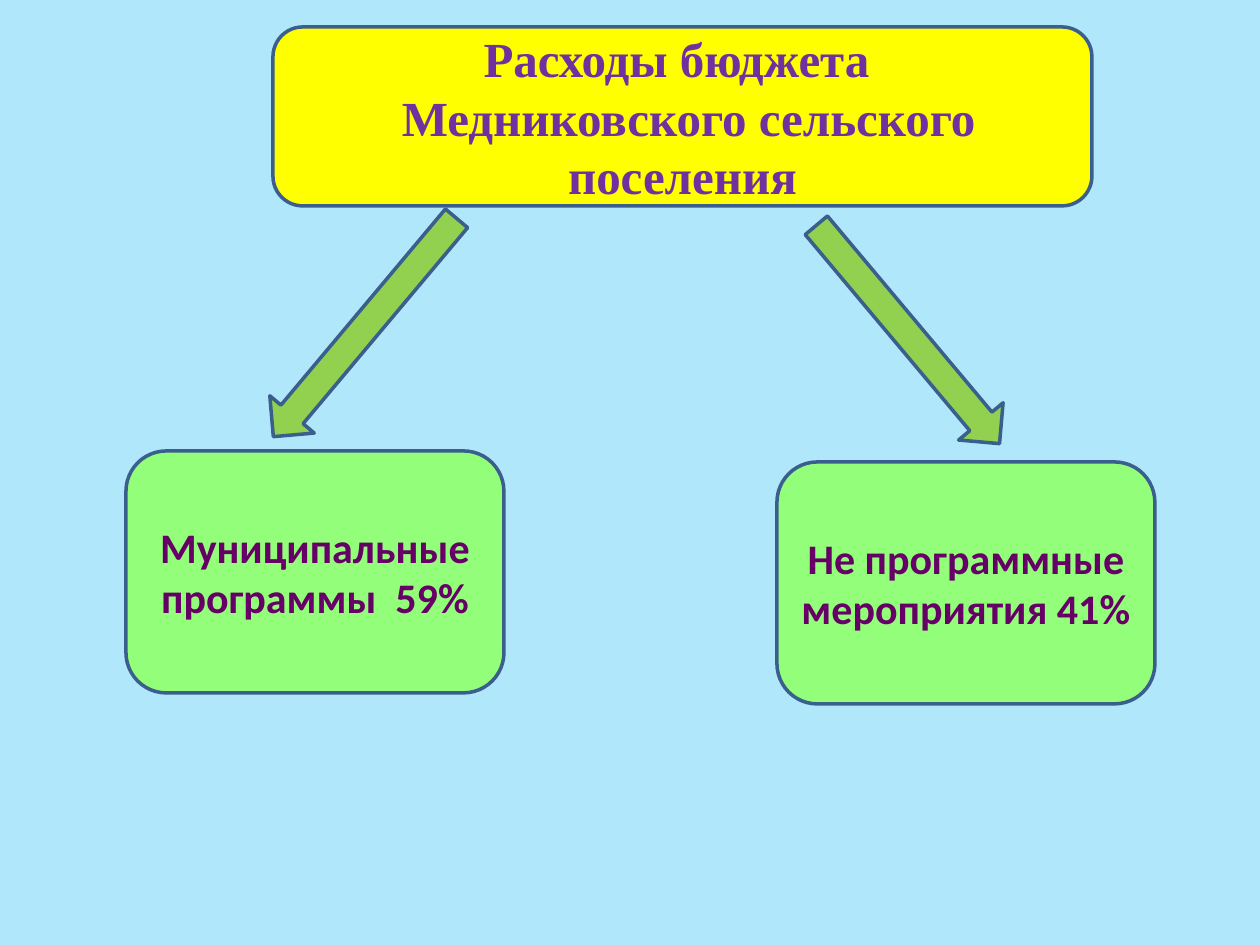
from pptx import Presentation
from pptx.dml.color import RGBColor
from pptx.enum.shapes import MSO_SHAPE
from pptx.enum.text import MSO_ANCHOR, MSO_AUTO_SIZE, PP_ALIGN
from pptx.util import Emu, Pt

ROUND, ARROW = MSO_SHAPE.ROUNDED_RECTANGLE, MSO_SHAPE.DOWN_ARROW
CENTER, MIDDLE, NO_FIT = PP_ALIGN.CENTER, MSO_ANCHOR.MIDDLE, MSO_AUTO_SIZE.NONE
PX = 914400 // 126
COLORS = {
    "background": "B0E7FA",
    "outline": "3A5F8C",
    "title_box": "FFFF00",
    "title_text": "7030A0",
    "arrow": "92D050",
    "branch_box": "93FE7A",
    "branch_text": "660066",
}


def color(name):
    return RGBColor.from_string(COLORS[name])


def px(*lengths):
    return [Emu(n * PX) for n in lengths]


def add_outlined(s, kind, box, fill, rotation=0):
    sp = s.shapes.add_shape(kind, *px(*box))
    sp.shadow.inherit = False
    sp.rotation = rotation
    sp.fill.solid()
    sp.fill.fore_color.rgb = color(fill)
    sp.line.color.rgb = color("outline")
    sp.line.width = Pt(2)
    return sp


def set_text(sp, lines, *, font, size, fill):
    tf = sp.text_frame
    tf.word_wrap = True
    tf.auto_size = NO_FIT
    tf.vertical_anchor = MIDDLE
    for i, line in enumerate(lines):
        p = tf.add_paragraph() if i else tf.paragraphs[0]
        p.alignment = CENTER
        r = p.add_run()
        r.text = line
        r.font.name = font
        r.font.size = Pt(size)
        r.font.bold = True
        r.font.color.rgb = color(fill)


def add_title(s, box):
    add_outlined(s, ROUND, box, "title_box")
    title = s.shapes.title
    title.left, title.top, title.width, title.height = px(*box)
    set_text(title, ["Расходы бюджета ", " Медниковского сельского поселения"],
             font="Times New Roman", size=28, fill="title_text")
    s.shapes._spTree.append(title._element)


def add_branch(s, box, text, arrow_offset, rotation):
    x, y, w, h = box
    dx, dy = arrow_offset
    add_outlined(s, ARROW, (x + dx, y + dy, 58, 285), "arrow", rotation)
    sp = add_outlined(s, ROUND, box, "branch_box")
    set_text(sp, [text], font="Calibri", size=24, fill="branch_text")


def main():
    prs = Presentation()
    prs.slide_width, prs.slide_height = px(1260, 945)
    s = prs.slides.add_slide(prs.slide_layouts[5])
    s.background.fill.solid()
    s.background.fill.fore_color.rgb = color("background")
    add_branch(s, (126, 451, 378, 242), "Муниципальные программы  59%", (210, -266), 40)
    add_branch(s, (777, 462, 378, 242), "Не программные мероприятия 41%", (102, -270), 320)
    add_title(s, (273, 27, 819, 179))
    prs.save("out.pptx")


if __name__ == "__main__":
    main()
